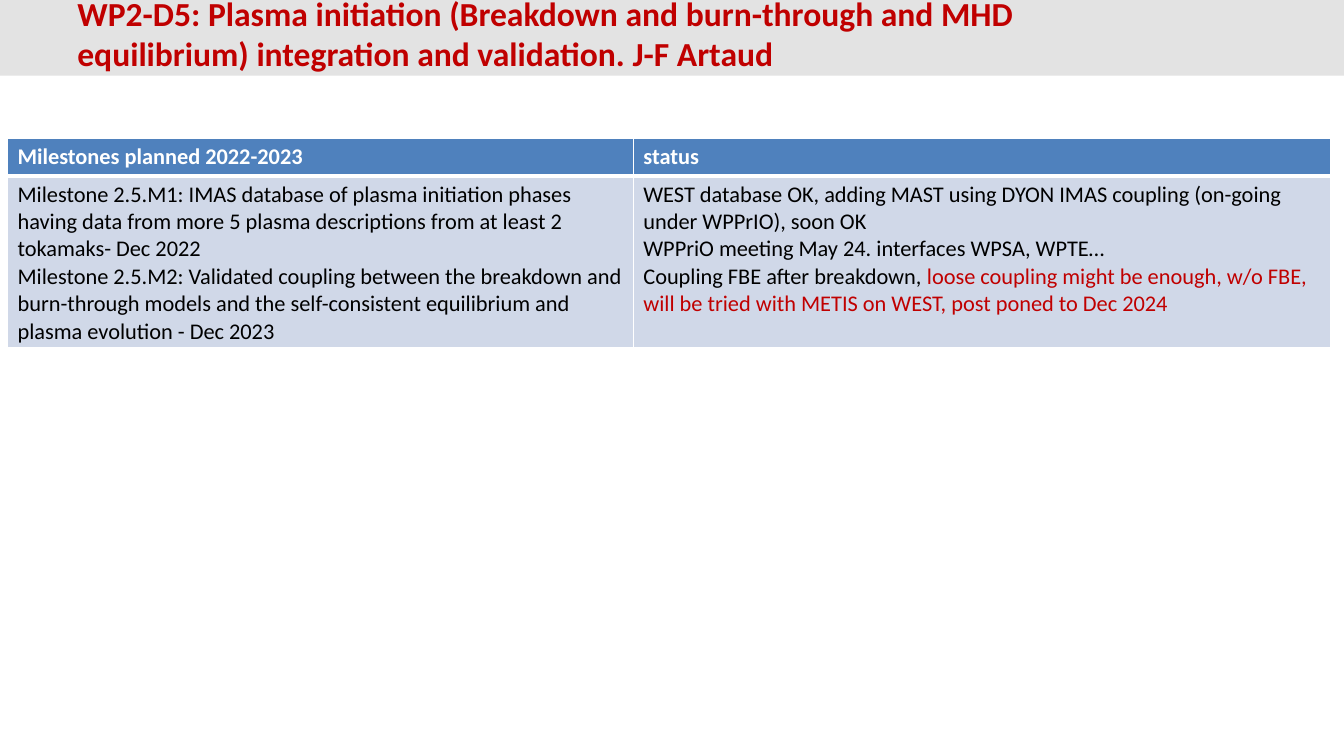
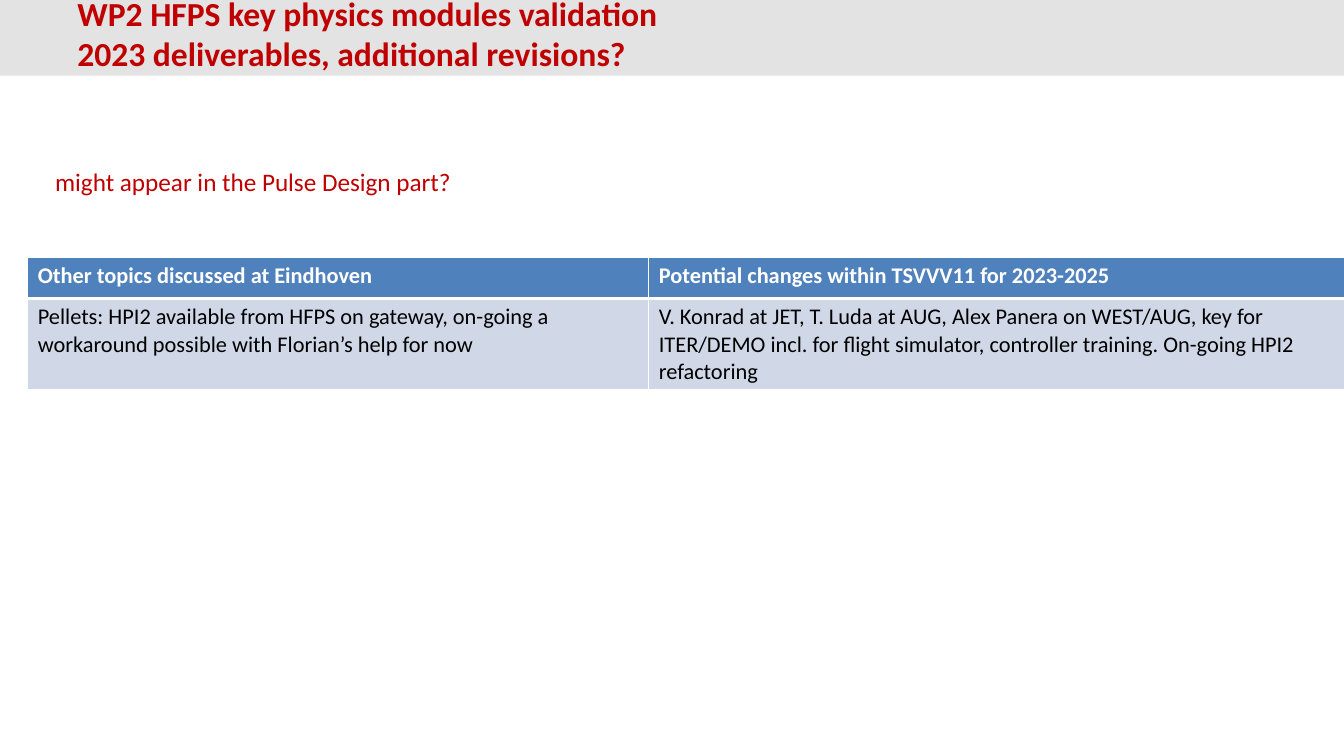
from dataclasses import dataclass

from lxml.etree import SubElement
from pptx import Presentation
from pptx.dml.color import RGBColor
from pptx.enum.shapes import MSO_SHAPE
from pptx.enum.text import MSO_ANCHOR
from pptx.oxml.ns import qn
from pptx.slide import Slide
from pptx.table import _Cell as Cell
from pptx.text.text import TextFrame
from pptx.util import Cm, Pt


@dataclass(frozen=True)
class Theme:
    font: str = "Calibri"
    red: str = "C00000"
    black: str = "000000"
    white: str = "FFFFFF"
    band: str = "E3E3E3"
    head: str = "4F81BD"
    body: str = "D0D8E8"
    title: int = 24
    note: int = 18
    cell: int = 16
    thin: int = 1
    thick: int = 3


THEME = Theme()
WIDTH, HEIGHT = Cm(33.87), Cm(19.05)


@dataclass(frozen=True)
class Span:
    """A run of text with a colour of its own."""
    text: str
    color: str


Para = list[str | Span]


@dataclass(frozen=True)
class Grid:
    """A table of one header row and one body row; lengths in cm."""
    left: float
    top: float
    cols: tuple[float, ...]
    rows: tuple[float, float]
    head: tuple[str, ...]
    body: tuple[list[Para], ...]


@dataclass(frozen=True)
class Page:
    title: Para
    grid: Grid
    note: str = ""


PAGES = [
    Page(
        title=["WP2-D5: Plasma initiation (Breakdown and burn-through and MHD "
               "equilibrium) integration and validation. J-F Artaud"],
        grid=Grid(
            0.19, 3.49, (15.77, 17.58), (0.94, 4.34),
            ("Milestones planned 2022-2023", "status"),
            (
                [
                    ["Milestone 2.5.M1: IMAS database of plasma initiation phases having "
                     "data from more 5 plasma descriptions from at least 2 tokamaks- Dec 2022"],
                    ["Milestone 2.5.M2: Validated coupling between the breakdown and "
                     "burn-through models and the self-consistent equilibrium and "
                     "plasma evolution - Dec 2023"],
                ],
                [
                    ["WEST database OK, adding MAST using DYON IMAS coupling "
                     "(on-going under WPPrIO), soon OK"],
                    ["WPPriO meeting May 24. interfaces WPSA, WPTE…"],
                    ["Coupling FBE after breakdown, ",
                     Span("loose coupling might be enough, w/o FBE, will be tried with "
                          "METIS on WEST, post poned to Dec 2024", THEME.red)],
                ],
            ),
        ),
    ),
    Page(
        title=["WP2 HFPS key physics modules validation", "\n",
               "2023 deliverables, additional revisions?"],
        note="might appear in the Pulse Design part?",
        grid=Grid(
            0.7, 6.48, (15.65, 17.88), (1.04, 2.29),
            ("Other topics discussed at Eindhoven",
             "Potential changes within TSVVV11 for 2023-2025"),
            (
                [["Pellets: HPI2 available from HFPS on gateway, on-going a workaround "
                  "possible with Florian’s help for now"]],
                [["V. Konrad at JET, T. Luda at AUG, Alex Panera on WEST/AUG, key for "
                  "ITER/DEMO incl. for flight simulator, controller training. "
                  "On-going HPI2 refactoring"]],
            ),
        ),
    ),
]


def write(frame: TextFrame, paras: list[Para], *, size: int,
          color: str = THEME.black, bold: bool = False) -> None:
    """Fill a frame; a "\\n" part is a line break."""
    for i, parts in enumerate(paras):
        para = frame.add_paragraph() if i else frame.paragraphs[0]
        for part in parts:
            if part == "\n":
                para.add_line_break()
                continue
            span = part if isinstance(part, Span) else Span(part, color)
            run = para.add_run()
            run.text = span.text
            run.font.name = THEME.font
            run.font.size = Pt(size)
            run.font.bold = bold
            run.font.color.rgb = RGBColor.from_string(span.color)


def add_box(slide: Slide, left: float, top: float, width: float, height: float,
            wrap: bool = True) -> TextFrame:
    box = slide.shapes.add_textbox(Cm(left), Cm(top), Cm(width), Cm(height))
    box.text_frame.word_wrap = wrap
    return box.text_frame


def add_title(slide: Slide, title: Para) -> None:
    band = slide.shapes.add_shape(MSO_SHAPE.RECTANGLE, 0, 0, WIDTH, Cm(1.91))
    band.shadow.inherit = False
    band.fill.solid()
    band.fill.fore_color.rgb = RGBColor.from_string(THEME.band)
    band.line.fill.background()
    frame = add_box(slide, 1.7, 0.2, 27.94, 1.27)
    frame.vertical_anchor = MSO_ANCHOR.MIDDLE
    write(frame, [title], size=THEME.title, color=THEME.red, bold=True)


def style(cell: Cell, fill: str, top: int, base: int) -> None:
    """Set the white borders first, then the fill, as the schema orders them."""
    props = cell._tc.get_or_add_tcPr()
    for side, width in zip("LRTB", (THEME.thin, THEME.thin, top, base)):
        line = SubElement(props, qn(f"a:ln{side}"), w=str(Pt(width)))
        SubElement(SubElement(line, qn("a:solidFill")), qn("a:srgbClr"), val=THEME.white)
    cell.fill.solid()
    cell.fill.fore_color.rgb = RGBColor.from_string(fill)


def add_grid(slide: Slide, grid: Grid) -> None:
    table = slide.shapes.add_table(
        len(grid.rows), len(grid.cols), Cm(grid.left), Cm(grid.top),
        Cm(sum(grid.cols)), Cm(sum(grid.rows))).table
    table.horz_banding = False
    for row, height in zip(table.rows, grid.rows):
        row.height = Cm(height)
    for i, width in enumerate(grid.cols):
        table.columns[i].width = Cm(width)
        head, body = table.cell(0, i), table.cell(1, i)
        style(head, THEME.head, THEME.thin, THEME.thick)
        style(body, THEME.body, THEME.thick, THEME.thin)
        write(head.text_frame, [[grid.head[i]]], size=THEME.cell,
              color=THEME.white, bold=True)
        write(body.text_frame, grid.body[i], size=THEME.cell)


def main() -> None:
    deck = Presentation()
    deck.slide_width, deck.slide_height = WIDTH, HEIGHT
    for page in PAGES:
        slide = deck.slides.add_slide(deck.slide_layouts[6])
        add_title(slide, page.title)
        if page.note:
            frame = add_box(slide, 1.14, 4.06, 10.95, 1.02, wrap=False)
            write(frame, [[page.note]], size=THEME.note, color=THEME.red)
        add_grid(slide, page.grid)
    deck.save("out.pptx")


if __name__ == "__main__":
    main()
